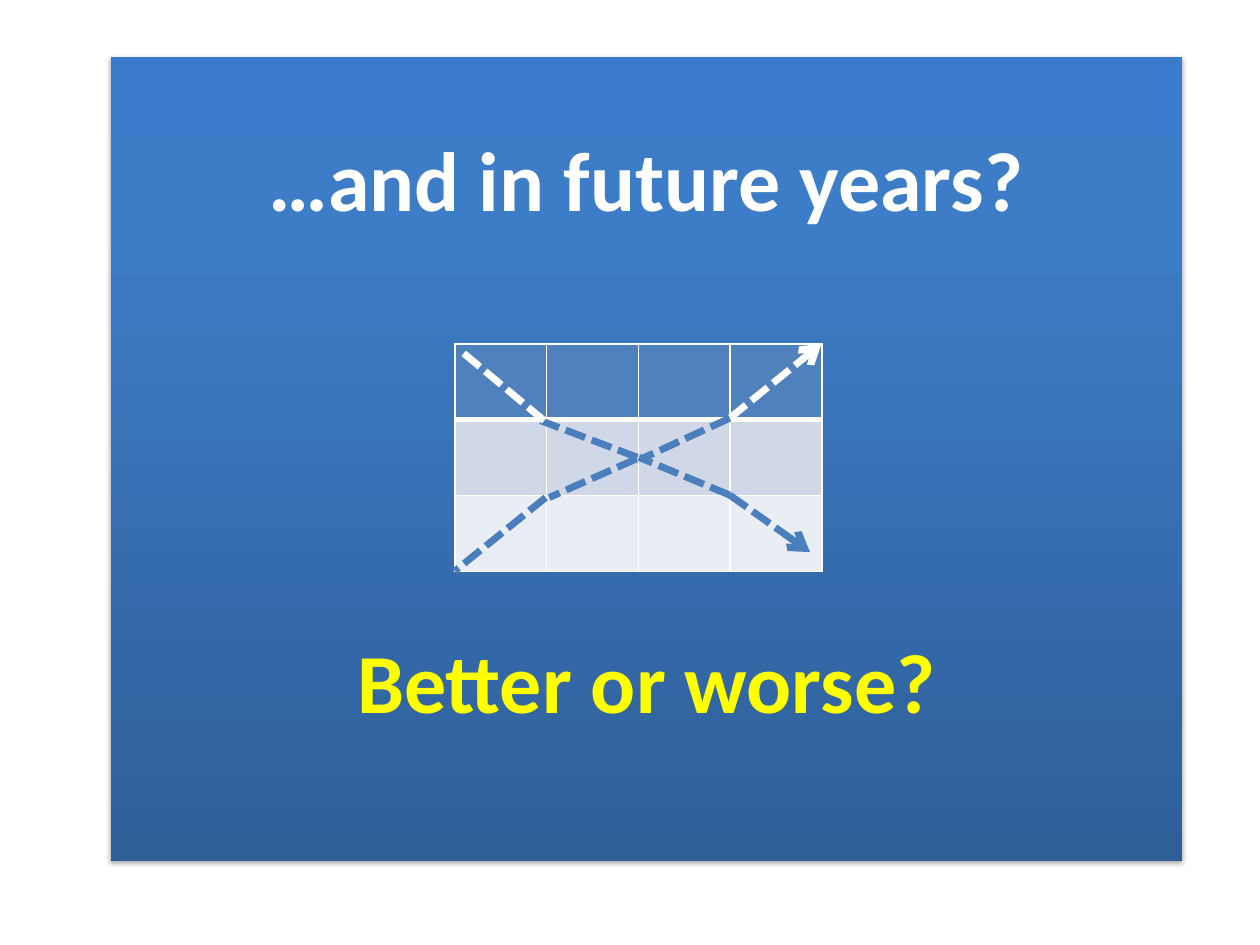
import pptx
import pptx.util
import pptx.dml.color
import pptx.enum.dml
import pptx.enum.shapes
import pptx.enum.text
import pptx.oxml
import pptx.oxml.ns
from lxml import etree
from pptx.util import Cm, Pt

# Content: wording, colour, space before (pt)
LINES = [
    ("…and in future years?", "FFFFFF", 0),
    ("Better or worse?", "FFFF00", 229),
]
GRADIENT = [(0, "2F5F99"), (80, "3D7CC7"), (100, "3A7CCB")]
WHITE, BLUE = "FFFFFF", "4B7EBC"

# Grid: one fill per row, rule widths (pt) from top edge to bottom edge
ROW_FILLS = ["4F81BD", "D0D8E8", "E9EDF4"]
RULES = [1, 3, 1, 1]
COLUMNS = 4
GRID_LEFT, GRID_TOP, COL_WIDTH, ROW_HEIGHT = 9.17, 6.93, 1.85, 1.53

# Trend segments in cm: start, end, colour, arrow at end
TRENDS = [
    ((14.71, 9.98), (16.33, 11.13), BLUE, True),
    ((12.85, 9.22), (10.9, 8.48), BLUE, False),
    ((14.71, 9.98), (12.88, 9.22), BLUE, False),
    ((10.97, 8.48), (9.25, 7.04), WHITE, False),
    ((14.71, 8.43), (16.56, 6.93), WHITE, True),
    ((11, 10.03), (9.17, 11.51), BLUE, False),
    ((12.83, 9.25), (11.07, 10.03), BLUE, False),
    ((14.71, 8.43), (12.93, 9.25), BLUE, False),
]


def colour(hex_code):
    return pptx.dml.color.RGBColor.from_string(hex_code)


def element(tag, body="", attributes=""):
    return pptx.oxml.parse_xml(
        f'<a:{tag} {pptx.oxml.ns.nsdecls("a")} {attributes}>{body}</a:{tag}>')


def solid(hex_code):
    return f'<a:solidFill><a:srgbClr val="{hex_code}"/></a:solidFill>'


def style_panel(panel):
    stops = "".join(f'<a:gs pos="{pos * 1000}"><a:srgbClr val="{code}"/></a:gs>'
                    for pos, code in GRADIENT)
    shadow = ('<a:outerShdw blurRad="39370" dist="22860" dir="5400000" rotWithShape="0">'
              '<a:srgbClr val="000000"><a:alpha val="35000"/></a:srgbClr></a:outerShdw>')
    for part in (element("prstGeom", "<a:avLst/>", 'prst="rect"'),
                 element("gradFill", f'<a:gsLst>{stops}</a:gsLst><a:lin ang="16200000" scaled="0"/>'),
                 element("effectLst", shadow)):
        panel._element.spPr.append(part)


def style_cell(cell, fill, top, bottom):
    cell.fill.solid()
    cell.fill.fore_color.rgb = colour(fill)
    borders = [("lnL", 1), ("lnR", 1), ("lnT", top), ("lnB", bottom)]
    for place, (side, width) in enumerate(borders):
        cell._tc.get_or_add_tcPr().insert(
            place, element(side, solid(WHITE), f'w="{Pt(width)}"'))


prs = pptx.Presentation()
prs.slide_width, prs.slide_height = Cm(25.4), Cm(19.05)
slide = prs.slides.add_slide(prs.slide_layouts[5])

# Gradient panel with both questions
panel = slide.shapes.title
panel.left, panel.top, panel.width, panel.height = Cm(2.23), Cm(1.15), Cm(21.6), Cm(16.2)
style_panel(panel)
frame = panel.text_frame
frame.word_wrap = True
frame.auto_size = pptx.enum.text.MSO_AUTO_SIZE.NONE
frame.vertical_anchor = pptx.enum.text.MSO_ANCHOR.TOP
frame.margin_top = Cm(1.42)
for index, (wording, ink, gap) in enumerate(LINES):
    paragraph = frame.add_paragraph() if index else frame.paragraphs[0]
    paragraph.alignment = pptx.enum.text.PP_ALIGN.CENTER
    paragraph.space_before = Pt(gap)
    run = paragraph.add_run()
    run.text = wording
    run.font.name, run.font.size, run.font.bold = "Calibri", Pt(48), True
    run.font.color.rgb = colour(ink)

# Grid
grid = slide.shapes.add_table(
    len(ROW_FILLS), COLUMNS, Cm(GRID_LEFT), Cm(GRID_TOP),
    Cm(COL_WIDTH * COLUMNS), Cm(ROW_HEIGHT * len(ROW_FILLS))).table
for column in grid.columns:
    column.width = Cm(COL_WIDTH)
for index, (row, fill) in enumerate(zip(grid.rows, ROW_FILLS)):
    row.height = Cm(ROW_HEIGHT)
    for cell in row.cells:
        style_cell(cell, fill, RULES[index], RULES[index + 1])

# Dashed trends crossing the grid
for start, end, ink, arrow in TRENDS:
    trend = slide.shapes.add_connector(
        pptx.enum.shapes.MSO_CONNECTOR.STRAIGHT, *map(Cm, start + end))
    trend.line.color.rgb = colour(ink)
    trend.line.width = Pt(4)
    trend.line.dash_style = pptx.enum.dml.MSO_LINE.SQUARE_DOT
    if arrow:
        trend.line._get_or_add_ln().append(element("tailEnd", attributes='type="arrow"'))
    etree.SubElement(trend._element.spPr, pptx.oxml.ns.qn("a:effectLst"))

prs.save("out.pptx")
